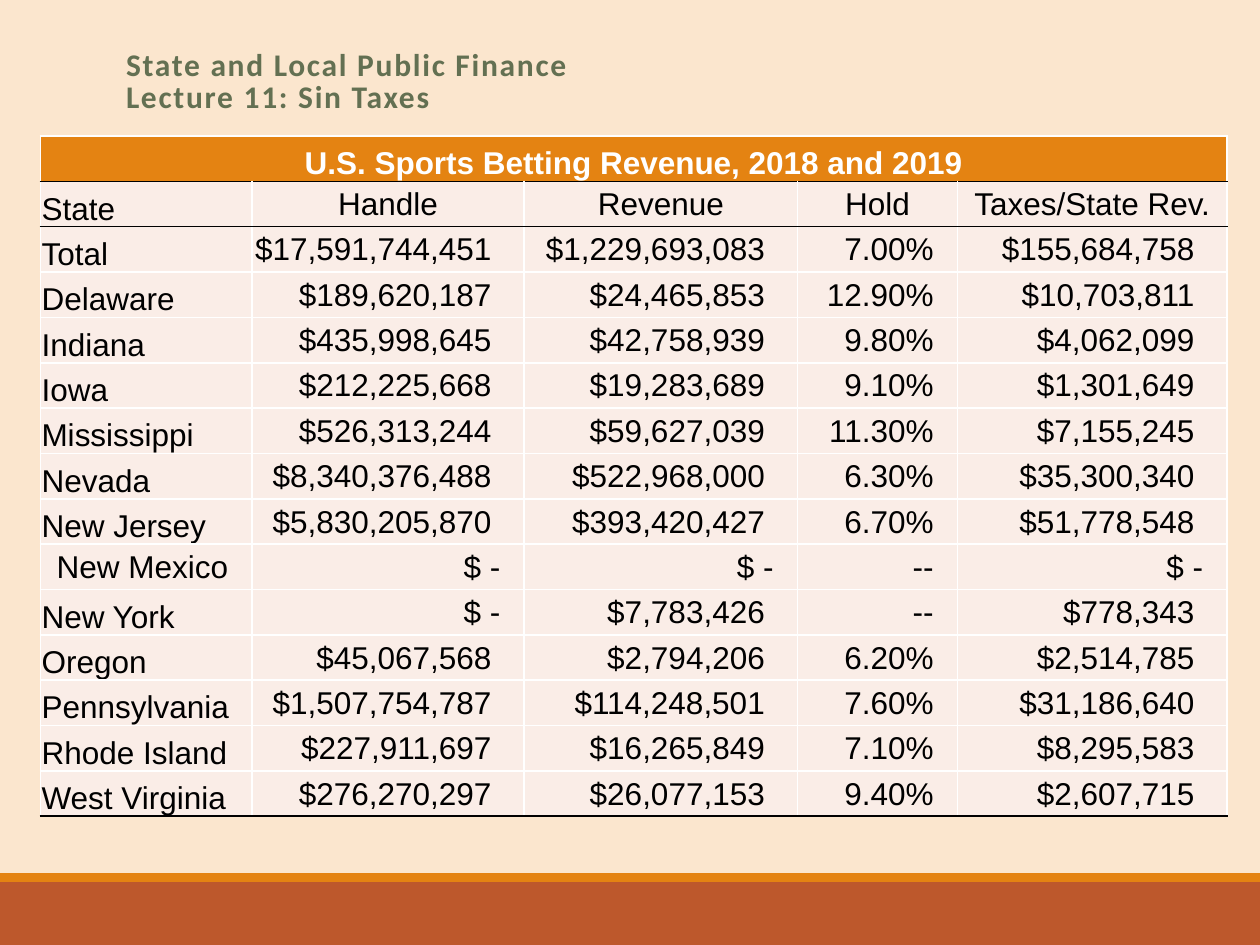
"""Build the slide on U.S. sports betting revenue by state."""
from lxml.etree import SubElement
from pptx import Presentation
from pptx.dml.color import RGBColor
from pptx.enum.shapes import MSO_SHAPE
from pptx.enum.text import MSO_ANCHOR, MSO_AUTO_SIZE, PP_ALIGN
from pptx.oxml.ns import qn
from pptx.util import Inches, Pt

COLORS = {
    "background": "FBE6CE", "rust": "BD582C", "orange": "E48312",
    "green": "637052", "cell": "FAEDE7", "white": "FFFFFF", "black": "000000",
}
HEADERS = ["State", "Handle", "Revenue", "Hold", "Taxes/State Rev."]
STATES = [
    ["Total", "$17,591,744,451", "$1,229,693,083", "7.00%", "$155,684,758"],
    ["Delaware", "$189,620,187", "$24,465,853", "12.90%", "$10,703,811"],
    ["Indiana", "$435,998,645", "$42,758,939", "9.80%", "$4,062,099"],
    ["Iowa", "$212,225,668", "$19,283,689", "9.10%", "$1,301,649"],
    ["Mississippi", "$526,313,244", "$59,627,039", "11.30%", "$7,155,245"],
    ["Nevada", "$8,340,376,488", "$522,968,000", "6.30%", "$35,300,340"],
    ["New Jersey", "$5,830,205,870", "$393,420,427", "6.70%", "$51,778,548"],
    ["New Mexico", "$ -", "$ -", "--", "$ -"],
    ["New York", "$ -", "$7,783,426", "--", "$778,343"],
    ["Oregon", "$45,067,568", "$2,794,206", "6.20%", "$2,514,785"],
    ["Pennsylvania", "$1,507,754,787", "$114,248,501", "7.60%", "$31,186,640"],
    ["Rhode Island", "$227,911,697", "$16,265,849", "7.10%", "$8,295,583"],
    ["West Virginia", "$276,270,297", "$26,077,153", "9.40%", "$2,607,715"],
]
ROWS = [["U.S. Sports Betting Revenue, 2018 and 2019", "", "", "", ""], HEADERS] + STATES
COLUMN_WIDTHS = [1.68, 2.16, 2.17, 1.27, 2.14]
RULED_BELOW = {0, 1, len(ROWS) - 1}


def set_font(font, name, color, bold):
    values = {"name": name, "size": Pt(18), "bold": bold}
    for attribute, value in values.items():
        setattr(font, attribute, value)
    font.color.rgb = RGBColor.from_string(COLORS[color])


def add_border(cell, side, color):
    line = SubElement(cell._tc.get_or_add_tcPr(), qn(f"a:ln{side}"), w=str(Pt(1)))
    fill = SubElement(line, qn("a:solidFill"))
    SubElement(fill, qn("a:srgbClr"), val=COLORS[color])


prs = Presentation()
prs.slide_width, prs.slide_height = Inches(10), Inches(7.5)
slide = prs.slides.add_slide(prs.slide_layouts[5])
slide.background.fill.solid()
slide.background.fill.fore_color.rgb = RGBColor.from_string(COLORS["background"])

for top, height, color in [(7, 0.5, "rust"), (6.93, 0.07, "orange")]:
    band = slide.shapes.add_shape(
        MSO_SHAPE.RECTANGLE, 0, Inches(top), prs.slide_width, Inches(height))
    band.shadow.inherit = False
    band.fill.solid()
    band.fill.fore_color.rgb = RGBColor.from_string(COLORS[color])
    band.line.fill.background()

title = slide.shapes.title
title_place = {"left": 0.9, "top": 0.33, "width": 8.25, "height": 0.65}
for attribute, value in title_place.items():
    setattr(title, attribute, Inches(value))
title.text_frame.text = "State and Local Public Finance\vLecture 11: Sin Taxes"
title.text_frame.auto_size = MSO_AUTO_SIZE.NONE
title.text_frame.vertical_anchor = MSO_ANCHOR.MIDDLE
heading = title.text_frame.paragraphs[0]
heading.alignment = PP_ALIGN.LEFT
heading.line_spacing = 0.85
for run in heading.runs:
    set_font(run.font, "Calibri", "green", True)
    run.font._element.set("spc", "100")

revenue = slide.shapes.add_table(
    len(ROWS), len(HEADERS), Inches(0.32), Inches(1.08),
    Inches(sum(COLUMN_WIDTHS)), Inches(0.36 * len(ROWS))).table
revenue.first_row = revenue.horz_banding = False
for column, width in zip(revenue.columns, COLUMN_WIDTHS):
    column.width = Inches(width)
revenue.cell(0, 0).merge(revenue.cell(0, len(HEADERS) - 1))

for r, row in enumerate(ROWS):
    for c, entry in enumerate(row):
        cell = revenue.cell(r, c)
        is_banner = r == 0
        is_figure = r > 1 and (c > 0 or entry == "New Mexico")
        is_label = c == 0 and not is_figure
        cell_format = {
            "margin_left": Inches(0.01), "margin_top": Inches(0.01),
            "margin_right": Inches(0.19 if is_figure else 0.01), "margin_bottom": 0,
            "vertical_anchor": MSO_ANCHOR.BOTTOM if is_label else MSO_ANCHOR.MIDDLE,
        }
        for attribute, value in cell_format.items():
            setattr(cell, attribute, value)
        borders = {
            "L": "white", "R": "white",
            "T": "black" if r - 1 in RULED_BELOW else "white",
            "B": "black" if r in RULED_BELOW else "white",
        }
        for side, color in borders.items():
            add_border(cell, side, color)
        cell.fill.solid()
        cell.fill.fore_color.rgb = RGBColor.from_string(
            COLORS["orange" if is_banner else "cell"])
        if not entry:
            continue
        is_amount = entry.startswith("$") and entry[-1].isdigit()
        paragraph = cell.text_frame.paragraphs[0]
        if is_figure:
            paragraph.alignment = PP_ALIGN.RIGHT
        elif is_banner or c > 0:
            paragraph.alignment = PP_ALIGN.CENTER
        else:
            paragraph.alignment = PP_ALIGN.LEFT
        run = paragraph.add_run()
        run.text = entry + " " if is_amount else entry
        set_font(run.font, "Arial", "white" if is_banner else "black", is_banner)

prs.save("out.pptx")
